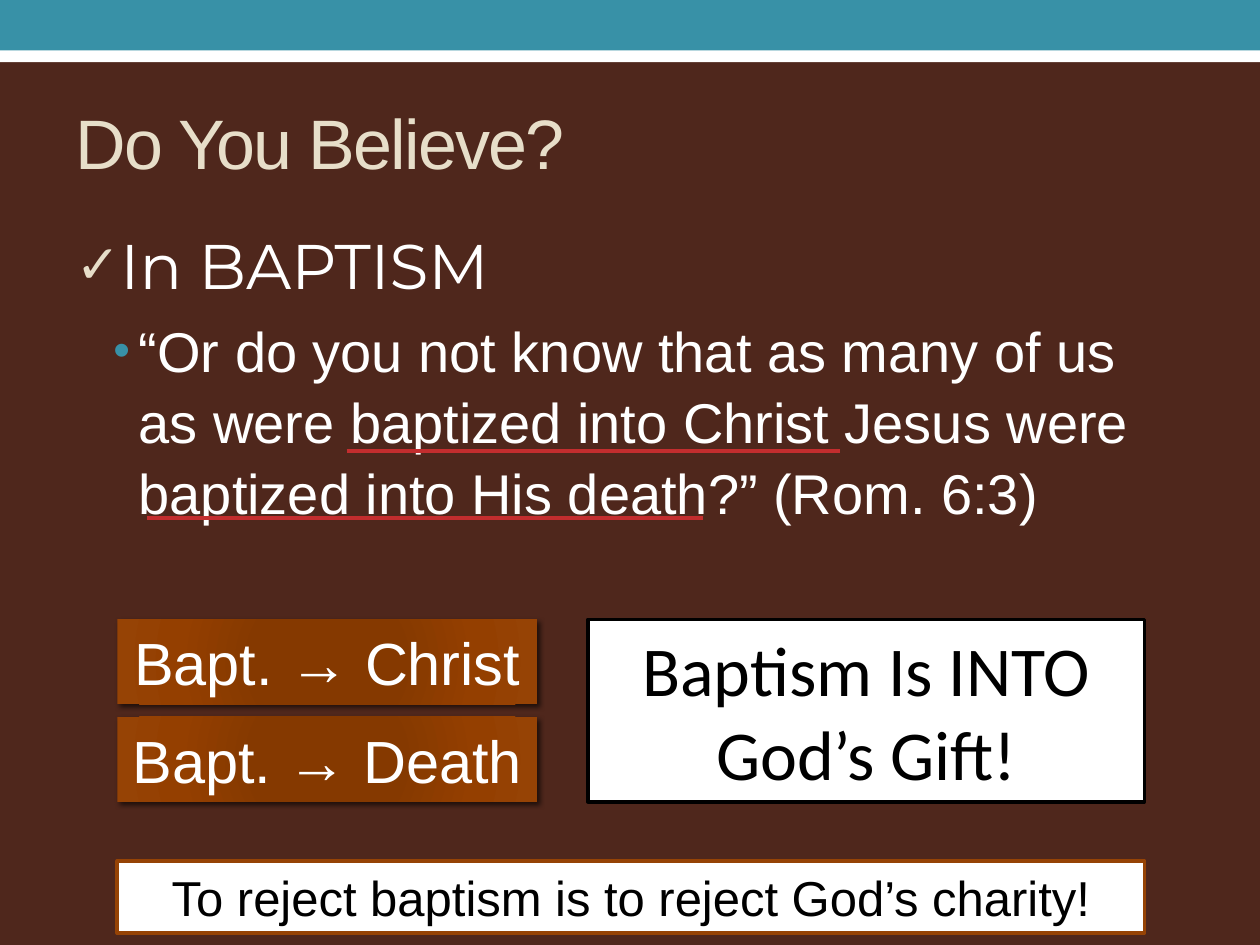
from pptx import Presentation
from pptx.dml.color import RGBColor
from pptx.enum.shapes import MSO_CONNECTOR, MSO_SHAPE
from pptx.enum.text import MSO_ANCHOR, MSO_AUTO_SIZE, PP_ALIGN
from pptx.oxml import parse_xml
from pptx.oxml.ns import nsdecls, qn
from pptx.util import Pt
from lxml.etree import SubElement

WHITE, BLACK = "FFFFFF", "000000"
BROWN, TEAL, CREAM, RED = "4F271C", "3891A7", "E7DEC9", "C32D2E"
RUST, DARK_RUST, MID_RUST = "964305", "853900", "943F00"


def color(hex_code):
    return RGBColor.from_string(hex_code)


class SlideBuilder:
    line_width = 2.08
    glow_stops = [(0, DARK_RUST), (34, DARK_RUST), (70, MID_RUST), (100, RUST)]

    def __init__(self, slide):
        self.slide = slide
        slide.background.fill.solid()
        slide.background.fill.fore_color.rgb = color(BROWN)

    def style(self, paragraph, size, font, ink):
        for run in paragraph.runs:
            run.font.size = Pt(size)
            run.font.name = font
            run.font.color.rgb = color(ink)

    def place(self, placeholder, left, top, width, height):
        placeholder.left, placeholder.top = Pt(left), Pt(top)
        placeholder.width, placeholder.height = Pt(width), Pt(height)
        placeholder.text_frame.auto_size = MSO_AUTO_SIZE.NONE
        return placeholder.text_frame

    def title(self, text, box):
        frame = self.place(self.slide.shapes.title, *box)
        frame.text = text
        frame.vertical_anchor = MSO_ANCHOR.MIDDLE
        heading = frame.paragraphs[0]
        heading.alignment = PP_ALIGN.LEFT
        self.style(heading, 40, "Arial", CREAM)
        heading.runs[0].font._element.set("spc", "-100")

    def bullet(self, paragraph, char, ink, indent, hanging=14.4):
        props = paragraph._p.get_or_add_pPr()
        props.set("marL", str(Pt(indent)))
        props.set("indent", str(-Pt(hanging)))
        bullet_color = SubElement(props, qn("a:buClr"))
        SubElement(bullet_color, qn("a:srgbClr"), val=ink)
        SubElement(props, qn("a:buSzPct"), val="85000")
        SubElement(props, qn("a:buFont"), typeface="Arial")
        SubElement(props, qn("a:buChar"), char=char)

    def body(self, topic, verse, box):
        frame = self.place(self.slide.placeholders[1], *box)
        frame.text = topic
        heading, quote = frame.paragraphs[0], frame.add_paragraph()
        self.style(heading, 36, "Montserrat", WHITE)
        self.bullet(heading, "✓", CREAM, 14.4)
        quote.text = verse
        quote.level = 1
        quote.line_spacing = 1.05
        self.style(quote, 32, "Arial", WHITE)
        self.bullet(quote, "•", TEAL, 36)

    def rect(self, box, fill, outline=None):
        shape = self.slide.shapes.add_shape(
            MSO_SHAPE.RECTANGLE, *(Pt(length) for length in box))
        shape.shadow.inherit = False
        shape.fill.solid()
        shape.fill.fore_color.rgb = color(fill)
        if outline:
            shape.line.color.rgb = color(outline)
            shape.line.width = Pt(self.line_width)
        else:
            shape.line.fill.background()
        return shape

    def label(self, text, box, size, font="Arial", ink=BLACK, fill=WHITE, outline=None):
        shape = self.rect(box, fill, outline)
        frame = shape.text_frame
        frame.text = text
        frame.word_wrap = True
        frame.auto_size = MSO_AUTO_SIZE.SHAPE_TO_FIT_TEXT
        frame.paragraphs[0].alignment = PP_ALIGN.CENTER
        self.style(frame.paragraphs[0], size, font, ink)
        return shape

    def glowing_label(self, text, box):
        """Add a label with a radial gradient and a soft shadow."""
        shape = self.label(text, box, 34, ink=WHITE, fill=DARK_RUST)
        props = shape._element.spPr
        stops = "".join(
            f'<a:gs pos="{pos * 1000}"><a:srgbClr val="{ink}"/></a:gs>'
            for pos, ink in self.glow_stops)
        gradient = parse_xml(
            f'<a:gradFill {nsdecls("a")}><a:gsLst>{stops}</a:gsLst>'
            '<a:path path="circle"><a:fillToRect l="100000" t="100000" '
            'r="100000" b="100000"/></a:path></a:gradFill>')
        props.replace(props.find(qn("a:solidFill")), gradient)
        shadow = SubElement(
            props.find(qn("a:effectLst")), qn("a:outerShdw"),
            blurRad=str(Pt(3)), dist=str(Pt(2)), dir=str(45 * 60000),
            algn="tl", rotWithShape="0")
        shadow_color = SubElement(shadow, qn("a:srgbClr"), val=BLACK)
        SubElement(shadow_color, qn("a:alpha"), val="60000")

    def underline(self, start, end, y):
        line = self.slide.shapes.add_connector(
            MSO_CONNECTOR.STRAIGHT, Pt(start), Pt(y), Pt(end), Pt(y))
        line.line.color.rgb = color(RED)
        line.line.width = Pt(self.line_width)
        SubElement(line._element.spPr, qn("a:effectLst"))


def main():
    deck = Presentation()
    deck.slide_width, deck.slide_height = Pt(720), Pt(540)
    builder = SlideBuilder(deck.slides.add_slide(deck.slide_layouts[1]))

    builder.rect((0, 17.5, 720, 18), WHITE)
    builder.rect((0, 0, 720, 28.8), TEAL)
    builder.title("Do You Believe?", (36, 42, 648, 78))
    builder.body(
        "In BAPTISM",
        "“Or do you not know that as many of us as were baptized into Christ "
        "Jesus were baptized into His death?” (Rom. 6:3)",
        (36, 126, 648, 210))

    left, top = 67, 354
    for row, goal in enumerate(("Christ", "Death")):
        builder.glowing_label(f"Bapt. → {goal}", (left, top + row * 55.7, 240, 48.5))
    builder.label("Baptism Is INTO God’s Gift!", (336, top, 318, 104.2), 40,
                  font="Calibri", outline=BLACK)
    builder.underline(198, 480, 257.8)
    builder.underline(84, 402, 296)
    builder.label("To reject baptism is to reject God’s charity!",
                  (left, 492, 587, 41.2), 28, outline=RUST)
    deck.save("out.pptx")


if __name__ == "__main__":
    main()
